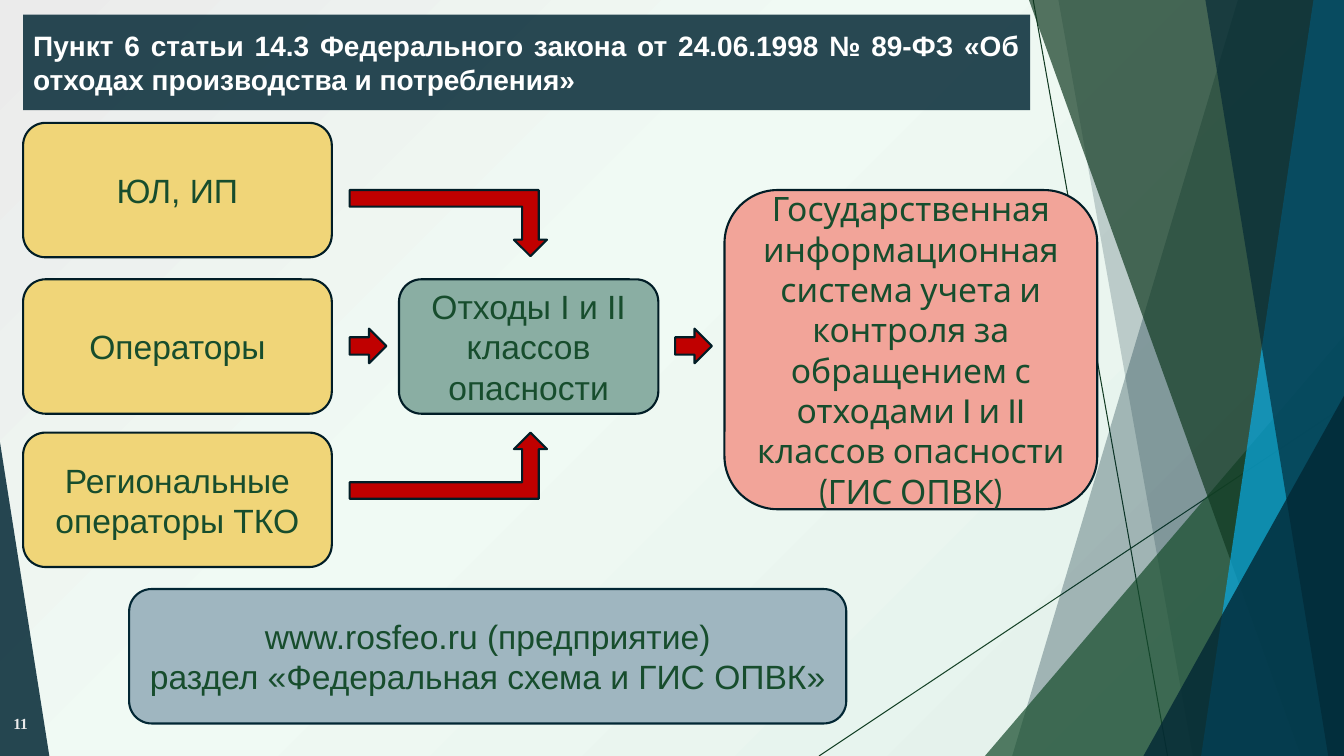
from dataclasses import dataclass

from lxml.etree import SubElement
from pptx import Presentation
from pptx.dml.color import RGBColor
from pptx.enum.shapes import MSO_CONNECTOR, MSO_SHAPE
from pptx.enum.text import MSO_ANCHOR, MSO_AUTO_SIZE, PP_ALIGN
from pptx.oxml import parse_xml
from pptx.oxml.ns import nsdecls, qn
from pptx.util import Pt

PX = 9525
WIDE, HIGH = 1280, 720


@dataclass(frozen=True)
class Theme:
    navy: str = "022734"
    edge: str = "011D26"
    green: str = "174D2D"
    moss: str = "113A22"
    pine: str = "144126"
    sky: str = "09ABE4"
    gold: str = "F0D578"
    sage: str = "8AAEA3"
    rose: str = "F2A499"
    steel: str = "9FB6C0"
    red: str = "C00000"
    white: str = "FFFFFF"
    pale: str = "EBEBEB"
    stops: tuple = ((0, "E1EFE9"), (58, "F0FAF4"), (100, "EBEBEB"))
    sans: str = "Arial"
    serif: str = "Times New Roman"
    round: str = "Cabin"
    head: int = 20
    body: int = 24
    note: int = 11


T = Theme()


@dataclass(frozen=True)
class Box:
    left: int
    top: int
    width: int
    height: int

    def emu(self) -> tuple:
        return tuple(v * PX for v in (self.left, self.top, self.width, self.height))


@dataclass(frozen=True)
class Ray:
    start: tuple
    end: tuple
    color: str


@dataclass(frozen=True)
class Band:
    """A strip from its slanted left side to the right edge of the slide."""
    top: int
    foot: int
    color: str
    alpha: int


@dataclass(frozen=True)
class Wedge:
    box: Box
    peak: int
    color: str
    alpha: int


@dataclass(frozen=True)
class Card:
    box: Box
    text: str
    color: str
    font: str = T.sans
    edge: str = T.edge


@dataclass(frozen=True)
class Arrow:
    box: Box
    kind: MSO_SHAPE
    mirror: bool = False


RAYS = (
    Ray((984, 0), (1112, HIGH), T.moss),
    Ray((WIDE, 387), (780, HIGH), T.pine),
)
DECOR = (
    Band(1179, 964, T.navy, 30),
    Band(1008, 1136, T.navy, 20),
    Wedge(Box(938, 320, 342, 400), 1, T.green, 72),
    Band(980, 1239, T.moss, 70),
    Band(1251, 1144, T.sky, 70),
    Band(1148, 1265, T.navy, 65),
    Wedge(Box(1089, 377, 191, 343), 1, T.navy, 80),
    Wedge(Box(0, 421, 47, 299), 0, T.navy, 85),
)
SOURCES = ((117, "ЮЛ, ИП"), (266, "Операторы"), (412, "Региональные операторы ТКО"))
CARDS = (
    *(Card(Box(22, top, 294, 128), text, T.gold) for top, text in SOURCES),
    Card(Box(380, 266, 247, 128), "Отходы I и II классов опасности", T.sage),
    Card(Box(690, 181, 355, 304),
         "Государственная информационная система учета и контроля за "
         "обращением с отходами I и II классов опасности\n(ГИС ОПВК)",
         T.rose, T.round),
    Card(Box(123, 561, 683, 128),
         "www.rosfeo.ru (предприятие)\nраздел «Федеральная схема и ГИС ОПВК»",
         T.steel, edge=T.navy),
)
ARROWS = (
    Arrow(Box(333, 412, 188, 63), MSO_SHAPE.BENT_UP_ARROW),
    Arrow(Box(333, 313, 35, 33), MSO_SHAPE.RIGHT_ARROW),
    Arrow(Box(333, 181, 188, 63), MSO_SHAPE.BENT_UP_ARROW, True),
    Arrow(Box(643, 313, 35, 33), MSO_SHAPE.RIGHT_ARROW),
)


def paint(shape, color: str, alpha: int = 100, edge: str = "") -> None:
    shape.fill.solid()
    shape.fill.fore_color.rgb = RGBColor.from_string(color)
    if alpha < 100:
        tint = shape.element.spPr.find(qn("a:solidFill"))[0]
        SubElement(tint, qn("a:alpha"), val=str(alpha * 1000))
    if edge:
        shape.line.color.rgb = RGBColor.from_string(edge)
        shape.line.width = Pt(1.5)
    else:
        shape.line.fill.background()


def write(shape, text: str, font: str, size: int, color: str,
          align: PP_ALIGN, bold: bool = False) -> None:
    frame = shape.text_frame
    frame.text = text
    frame.word_wrap = True
    frame.auto_size = MSO_AUTO_SIZE.NONE
    frame.vertical_anchor = MSO_ANCHOR.MIDDLE
    for para in frame.paragraphs:
        para.alignment = align
        for run in para.runs:
            run.font.name = font
            run.font.size = Pt(size)
            run.font.bold = bold
            run.font.color.rgb = RGBColor.from_string(color)


def add_form(slide, kind: MSO_SHAPE, box: Box):
    shape = slide.shapes.add_shape(kind, *box.emu())
    shape.shadow.inherit = False
    return shape


def add_back(slide) -> None:
    slide.background.fill.solid()
    props = slide.element.find(".//" + qn("p:bgPr"))
    stops = "".join(f'<a:gs pos="{pos * 1000}"><a:srgbClr val="{color}"/></a:gs>'
                    for pos, color in T.stops)
    props.replace(props[0], parse_xml(
        f'<a:gradFill {nsdecls("a")} rotWithShape="1"><a:gsLst>{stops}</a:gsLst>'
        '<a:path path="circle"><a:fillToRect l="100000" t="100000"/></a:path>'
        '</a:gradFill>'))


def add_ray(slide, ray: Ray) -> None:
    ends = (v * PX for v in ray.start + ray.end)
    line = slide.shapes.add_connector(MSO_CONNECTOR.STRAIGHT, *ends)
    line.line.color.rgb = RGBColor.from_string(ray.color)
    line.line.width = Pt(0.75)
    SubElement(line.element.spPr, qn("a:effectLst"))


def add_band(slide, band: Band) -> None:
    form = slide.shapes.build_freeform(band.top, 0, scale=PX)
    form.add_line_segments([(WIDE, 0), (WIDE, HIGH), (band.foot, HIGH)])
    shape = form.convert_to_shape()
    shape.shadow.inherit = False
    paint(shape, band.color, band.alpha)


def add_wedge(slide, wedge: Wedge) -> None:
    shape = add_form(slide, MSO_SHAPE.ISOSCELES_TRIANGLE, wedge.box)
    shape.adjustments[0] = wedge.peak
    paint(shape, wedge.color, wedge.alpha)


def add_title(slide) -> None:
    """Turn the title placeholder into the banner with two cut corners."""
    title = slide.shapes.title
    title.left, title.top, title.width, title.height = Box(22, 14, 959, 91).emu()
    title.element.spPr.insert(1, parse_xml(
        f'<a:prstGeom {nsdecls("a")} prst="snip2DiagRect"><a:avLst>'
        '<a:gd name="adj1" fmla="val 0"/><a:gd name="adj2" fmla="val 50000"/>'
        '</a:avLst></a:prstGeom>'))
    paint(title, T.navy, 84)
    write(title, "Пункт 6 статьи 14.3 Федерального закона от 24.06.1998 № 89-ФЗ "
          "«Об отходах производства и потребления»",
          T.sans, T.head, T.white, PP_ALIGN.JUSTIFY, True)


def add_card(slide, card: Card) -> None:
    shape = add_form(slide, MSO_SHAPE.ROUNDED_RECTANGLE, card.box)
    paint(shape, card.color, edge=card.edge)
    write(shape, card.text, card.font, T.body, T.green, PP_ALIGN.CENTER)


def add_arrow(slide, arrow: Arrow) -> None:
    shape = add_form(slide, arrow.kind, arrow.box)
    paint(shape, T.red, edge=T.edge)
    if arrow.mirror:
        shape.rotation = 180
        shape.element.spPr.find(qn("a:xfrm")).set("flipH", "1")


def add_page(slide) -> None:
    page = slide.shapes.add_textbox(*Box(0, 670, 36, 38).emu())
    page.text_frame.margin_left = 0
    write(page, "11", T.serif, T.note, T.pale, PP_ALIGN.RIGHT, True)


def main() -> None:
    deck = Presentation()
    deck.slide_width, deck.slide_height = WIDE * PX, HIGH * PX
    slide = deck.slides.add_slide(deck.slide_layouts[5])
    add_back(slide)
    for ray in RAYS:
        add_ray(slide, ray)
    for part in DECOR:
        if isinstance(part, Band):
            add_band(slide, part)
        else:
            add_wedge(slide, part)
    add_title(slide)
    add_page(slide)
    for card in CARDS:
        add_card(slide, card)
    for arrow in ARROWS:
        add_arrow(slide, arrow)
    deck.save("out.pptx")


if __name__ == "__main__":
    main()
